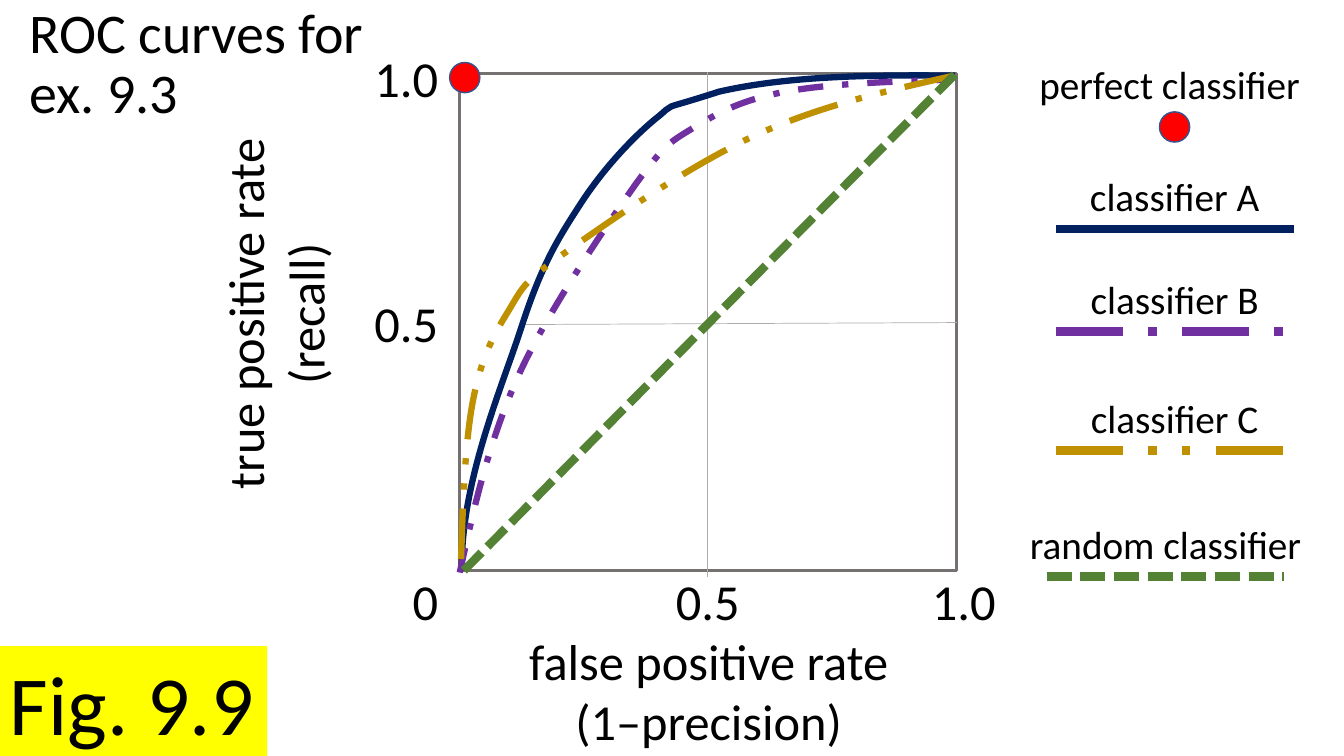
from lxml import etree
from pptx import Presentation
from pptx.dml.color import RGBColor
from pptx.enum.dml import MSO_LINE
from pptx.enum.shapes import MSO_CONNECTOR, MSO_SHAPE
from pptx.enum.text import MSO_ANCHOR, MSO_AUTO_SIZE, PP_ALIGN
from pptx.oxml.ns import qn
from pptx.util import Inches, Pt

LEFT, CENTER = PP_ALIGN.LEFT, PP_ALIGN.CENTER
SOLID, SHORT_DASH, DASH_DOT = MSO_LINE.SOLID, MSO_LINE.SQUARE_DOT, MSO_LINE.DASH_DOT
LONG_DASH_DOT, LONG_DASH_DOT_DOT = MSO_LINE.LONG_DASH_DOT, MSO_LINE.DASH_DOT_DOT

# Content (lengths in inches)
FONT = "Calibri"
COLORS = {"text": "000000", "frame": "767171", "grid": "AFABAB", "A": "002060",
          "B": "7030A0", "C": "BF9000", "random": "548235", "perfect": "FF0000",
          "dot edge": "325491", "figure": "FFFF00"}
TITLE = "ROC curves for \vex. 9.3"
PLOT_LEFT, PLOT_TOP, PLOT_SIDE = 4.56, 0.73, 4.93
PLOT_RIGHT = PLOT_LEFT + PLOT_SIDE

# Each curve: colour, dash, start point, then Bezier triples
CURVES = [
    ("A", SOLID, (4.58, 5.66), [
        [(4.57, 4.76), (4.99, 3.82), (5.18, 3.22)],
        [(5.38, 2.61), (5.54, 2.36), (5.76, 2.02)],
        [(5.98, 1.68), (6.27, 1.37), (6.5, 1.18)],
        [(6.73, 1), (6.48, 1.12), (7.13, 0.91)],
        [(7.78, 0.76), (8.57, 0.74), (9.47, 0.75)]]),
    ("B", DASH_DOT, (4.56, 5.68), [
        [(4.7, 5.03), (4.85, 4.38), (5.14, 3.73)],
        [(5.43, 3.09), (6.02, 2.23), (6.31, 1.82)],
        [(6.61, 1.41), (6.65, 1.41), (6.89, 1.26)],
        [(7.14, 1.11), (7.36, 0.99), (7.79, 0.91)],
        [(8.21, 0.83), (8.82, 0.81), (9.44, 0.79)]]),
    ("C", LONG_DASH_DOT_DOT, (9.46, 0.75), [
        [(8.81, 0.9), (8.16, 1.04), (7.52, 1.33)],
        [(6.87, 1.62), (6.02, 2.21), (5.6, 2.51)],
        [(5.19, 2.8), (5.19, 2.84), (5.04, 3.09)],
        [(4.89, 3.33), (4.77, 3.56), (4.69, 3.98)],
        [(4.61, 4.4), (4.59, 5.02), (4.57, 5.63)]]),
]
GRID_LINES = [((7.02, 0.71), (7.02, 5.72)), ((5.18, 3.22), (PLOT_RIGHT, 3.2))]
DIAGONAL = ((4.6, 5.66), (9.47, 0.74))

# Legend: label, colour, dash, centre x, line y
LEGEND = [
    ("classifier A", "A", SOLID, 11.65, 2.27),
    ("classifier B", "B", LONG_DASH_DOT, 11.65, 3.29),
    ("classifier C", "C", LONG_DASH_DOT_DOT, 11.65, 4.47),
    ("random classifier", "random", SHORT_DASH, 11.56, 5.72),
]
LEGEND_LINE, LABEL_RISE, LABEL_WIDTH, LABEL_HEIGHT = 2.36, 0.61, 2.96, 0.57
DOT_SIZE = 0.3
DOT_CENTERS = [(11.65, 1.26), (4.61, 0.77)]

# Axis ticks: text, centre x, top
TICK_ROW, TICK_COLUMN = 5.61, 4.03
TICKS = [("0", 4.22, TICK_ROW), ("0.5", 7.02, TICK_ROW), ("1.0", 9.56, TICK_ROW),
         ("0.5", TICK_COLUMN, 2.85), ("1.0", TICK_COLUMN, 0.42)]
TICK_WIDTH, TICK_HEIGHT = 0.84, 0.71

presentation = Presentation()
presentation.slide_width, presentation.slide_height = Inches(13.33), Inches(7.5)
slide = presentation.slides.add_slide(presentation.slide_layouts[5])
shapes = slide.shapes


def color(name):
    return RGBColor.from_string(COLORS[name])


def style_line(line, name, width, dash=SOLID):
    line.color.rgb = color(name)
    for attribute, value in {"width": Pt(width), "dash_style": dash}.items():
        setattr(line, attribute, value)


def add_line(start, end, name, width, dash=SOLID):
    connector = shapes.add_connector(
        MSO_CONNECTOR.STRAIGHT, *(Inches(value) for value in (*start, *end)))
    style_line(connector.line, name, width, dash)
    etree.SubElement(connector._element.spPr, qn("a:effectLst"))


def add_outline(kind, box, fill, edge, width):
    shape = shapes.add_shape(kind, *(Inches(value) for value in box))
    shape.shadow.inherit = False
    if fill:
        shape.fill.solid()
        shape.fill.fore_color.rgb = color(fill)
    else:
        shape.fill.background()
    style_line(shape.line, edge, width)


def add_curve(name, dash, start, triples):
    points = [(Inches(x), Inches(y)) for triple in triples for x, y in triple]
    builder = shapes.build_freeform(Inches(start[0]), Inches(start[1]))
    builder.add_line_segments(points, close=False)
    curve = builder.convert_to_shape()
    # Turn every three straight segments into one Bezier segment
    outline = next(curve._element.iter(qn("a:path")))
    segments = outline.findall(qn("a:lnTo"))
    for index in range(0, len(segments), 3):
        bezier = etree.SubElement(outline, qn("a:cubicBezTo"))
        for segment in segments[index:index + 3]:
            bezier.append(segment[0])
            outline.remove(segment)
    curve.shadow.inherit = False
    curve.fill.background()
    style_line(curve.line, name, 4.5, dash)


def format_text(shape, size, alignment, **frame_format):
    for attribute, value in frame_format.items():
        setattr(shape.text_frame, attribute, value)
    for paragraph in shape.text_frame.paragraphs:
        paragraph.alignment = alignment
        for run in paragraph.runs:
            run.font.name, run.font.size = FONT, Pt(size)
            run.font.color.rgb = color("text")


def add_text(text, box, size, alignment=CENTER):
    shape = shapes.add_textbox(*(Inches(value) for value in box))
    shape.text_frame.text = text
    format_text(shape, size, alignment, word_wrap=False,
                auto_size=MSO_AUTO_SIZE.SHAPE_TO_FIT_TEXT)
    return shape


def add_label(text, center, top):
    add_text(text, (center - LABEL_WIDTH / 2, top, LABEL_WIDTH, LABEL_HEIGHT), 28)


# Title
title = shapes.title
title.left, title.top, title.width, title.height = (
    Inches(value) for value in (0.19, 0, 12.77, 1.71))
title.text_frame.text = TITLE
format_text(title, 40, LEFT, word_wrap=True, vertical_anchor=MSO_ANCHOR.TOP)
title.text_frame.paragraphs[0].line_spacing = 0.9

# Plot frame, grid and curves
add_outline(MSO_SHAPE.RECTANGLE, (PLOT_LEFT, PLOT_TOP, PLOT_SIDE, PLOT_SIDE),
            None, "frame", 2.25)
for start, end in GRID_LINES:
    add_line(start, end, "grid", 0.5)
for curve_data in CURVES:
    add_curve(*curve_data)
add_line(*DIAGONAL, "random", 6, SHORT_DASH)

# Legend and perfect-classifier dots
add_label("perfect classifier", 11.6, 0.55)
for label, name, dash, center, y in LEGEND:
    add_label(label, center, y - LABEL_RISE)
    add_line((center - LEGEND_LINE / 2, y), (center + LEGEND_LINE / 2, y), name, 6, dash)
for x, y in DOT_CENTERS:
    add_outline(MSO_SHAPE.OVAL, (x - DOT_SIZE / 2, y - DOT_SIZE / 2, DOT_SIZE, DOT_SIZE),
                "perfect", "dot edge", 1)

# Axis ticks and titles
for text, center, top in TICKS:
    add_text(text, (center - TICK_WIDTH / 2, top, TICK_WIDTH, TICK_HEIGHT), 36)
add_text("false positive rate\n(1–precision)", (5.13, 6.2, 3.8, 1.31), 36)
vertical_title = add_text("true positive rate\n(recall)", (0.87, 2.46, 3.71, 1.31), 36)
vertical_title.rotation = 270

# Figure number
figure_number = add_text("Fig. 9.9", (0, 6.41, 2.65, 1.11), 60, LEFT)
figure_number.fill.solid()
figure_number.fill.fore_color.rgb = color("figure")

presentation.save("out.pptx")
